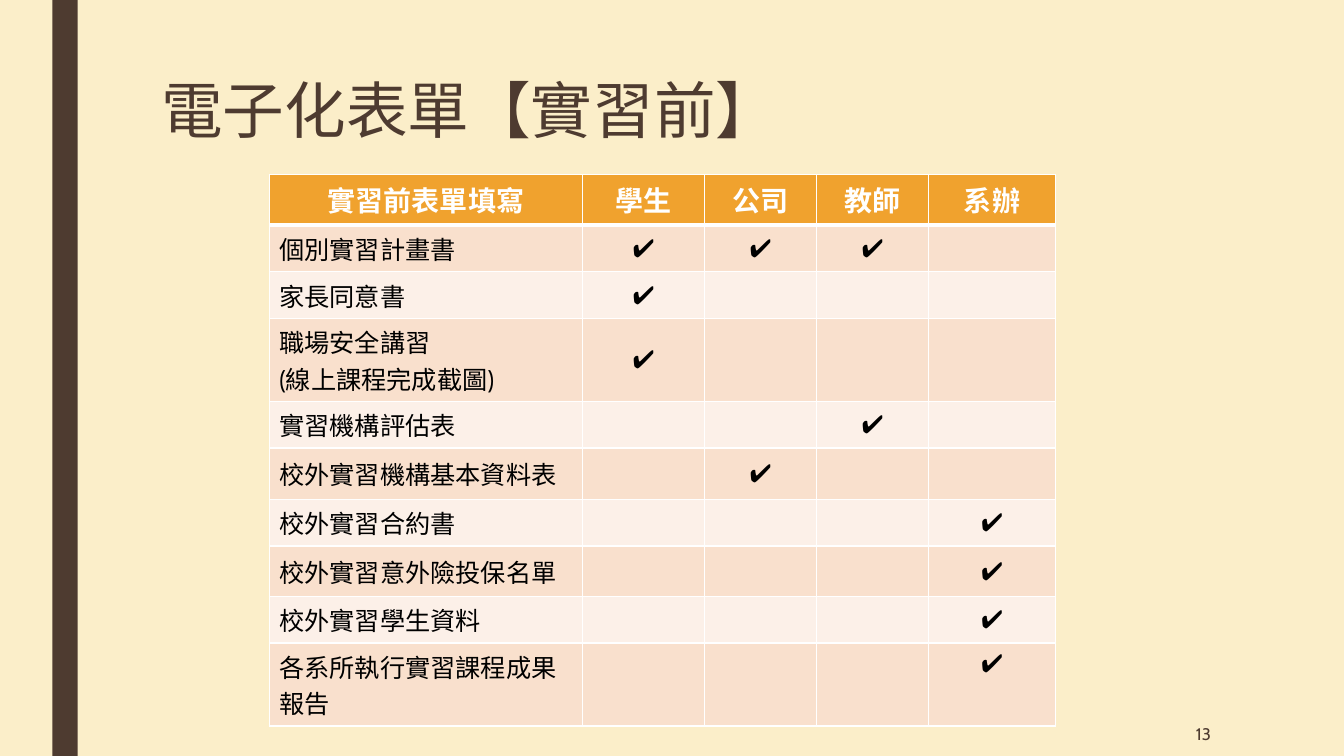
import pptx
import pptx.dml.color
import pptx.enum.shapes
import pptx.enum.text
import pptx.oxml
import pptx.oxml.ns
import pptx.util
from pptx.util import Inches

RGBColor = pptx.dml.color.RGBColor
PP_ALIGN = pptx.enum.text.PP_ALIGN
MSO_ANCHOR = pptx.enum.text.MSO_ANCHOR

CREAM = RGBColor(0xFB, 0xEE, 0xC9)
BROWN = RGBColor(0x4E, 0x3B, 0x30)
ORANGE = RGBColor(0xF0, 0xA2, 0x2E)
PEACH = RGBColor(0xF9, 0xE0, 0xCD)
PALE = RGBColor(0xFC, 0xF0, 0xE8)
WHITE = RGBColor(0xFF, 0xFF, 0xFF)
BLACK = RGBColor(0, 0, 0)


def write(tf, text, size=18, font="Cabin", color=BLACK, bold=False,
          align=PP_ALIGN.LEFT, spacing=None):
    for i, line in enumerate(text.split("\n")):
        p = tf.add_paragraph() if i else tf.paragraphs[0]
        p.alignment = align
        p.line_spacing = spacing
        r = p.add_run()
        r.text = line
        r.font.size = pptx.util.Pt(size)
        r.font.name = font
        r.font.color.rgb = color
        r.font.bold = bold


def set_borders(cell, bottom=1):
    tcPr = cell._tc.get_or_add_tcPr()
    for i, (side, width) in enumerate((("L", 1), ("R", 1), ("T", 1), ("B", bottom))):
        tcPr.insert(i, pptx.oxml.parse_xml(
            f'<a:ln{side} {pptx.oxml.ns.nsdecls("a")} w="{pptx.util.Pt(width)}">'
            f'<a:solidFill><a:srgbClr val="{WHITE}"/></a:solidFill></a:ln{side}>'))


prs = pptx.Presentation()
prs.slide_width, prs.slide_height = Inches(13.33), Inches(7.5)
s = prs.slides.add_slide(prs.slide_layouts[5])
s.background.fill.solid()
s.background.fill.fore_color.rgb = CREAM

# Side bar
bar = s.shapes.add_shape(pptx.enum.shapes.MSO_SHAPE.RECTANGLE,
                         Inches(0.52), 0, Inches(0.25), prs.slide_height)
bar.shadow.inherit = False
bar.fill.solid()
bar.fill.fore_color.rgb = BROWN
bar.line.fill.background()

# Title
title = s.shapes.title
title.left, title.top = Inches(1.5), Inches(0.75)
title.width, title.height = Inches(10.5), Inches(1.62)
title.text_frame.vertical_anchor = MSO_ANCHOR.TOP
write(title.text_frame, "電子化表單【實習前】", size=44, color=BROWN, spacing=0.89)

# Forms: name, font, row height, columns that are ticked
HEADERS = ["實習前表單填寫", "學生", "公司", "教師", "系辦"]
FORMS = [
    ("個別實習計畫書", "Cabin", 0.42, (1, 2, 3)),
    ("家長同意書", "Cabin", 0.42, (1,)),
    ("職場安全講習\n(線上課程完成截圖)", "Cabin", 0.72, (1,)),
    ("實習機構評估表", "Arial", 0.42, (3,)),
    ("校外實習機構基本資料表", "Arial", 0.51, (2,)),
    ("校外實習合約書", "Arial", 0.42, (4,)),
    ("校外實習意外險投保名單", "Arial", 0.5, (4,)),
    ("校外實習學生資料", "Arial", 0.42, (4,)),
    ("各系所執行實習課程成果報告", "Arial", 0.72, (4,)),
]
table = s.shapes.add_table(len(FORMS) + 1, len(HEADERS), Inches(2.67), Inches(1.73),
                           Inches(7.8), Inches(5)).table
table.horz_banding = False
for column, width in zip(table.columns, (3.11, 1.21, 1.11, 1.11, 1.26)):
    column.width = Inches(width)

# Header row
table.rows[0].height = Inches(0.45)
for col, text in enumerate(HEADERS):
    cell = table.cell(0, col)
    cell.fill.solid()
    cell.fill.fore_color.rgb = ORANGE
    set_borders(cell, bottom=3)
    write(cell.text_frame, text, size=20, color=WHITE, bold=True, align=PP_ALIGN.CENTER)

# Form rows
for row, (name, font, height, ticks) in enumerate(FORMS, start=1):
    table.rows[row].height = Inches(height)
    for col in range(len(HEADERS)):
        cell = table.cell(row, col)
        cell.vertical_anchor = MSO_ANCHOR.MIDDLE
        cell.fill.solid()
        cell.fill.fore_color.rgb = PEACH if row % 2 else PALE
        set_borders(cell, bottom=1)
        if col == 0:
            write(cell.text_frame, name, font=font)
        elif col in ticks:
            write(cell.text_frame, "✔", align=PP_ALIGN.CENTER)
# The last tick sits level with the first line of its form name
table.cell(len(FORMS), 4).vertical_anchor = MSO_ANCHOR.TOP

# Page number
number = s.shapes.add_textbox(Inches(10.36), Inches(7.06), Inches(1.75), Inches(0.44))
number.text_frame.word_wrap = True
number.text_frame.vertical_anchor = MSO_ANCHOR.MIDDLE
write(number.text_frame, "13", size=12, color=BROWN, align=PP_ALIGN.RIGHT)

prs.save("out.pptx")
